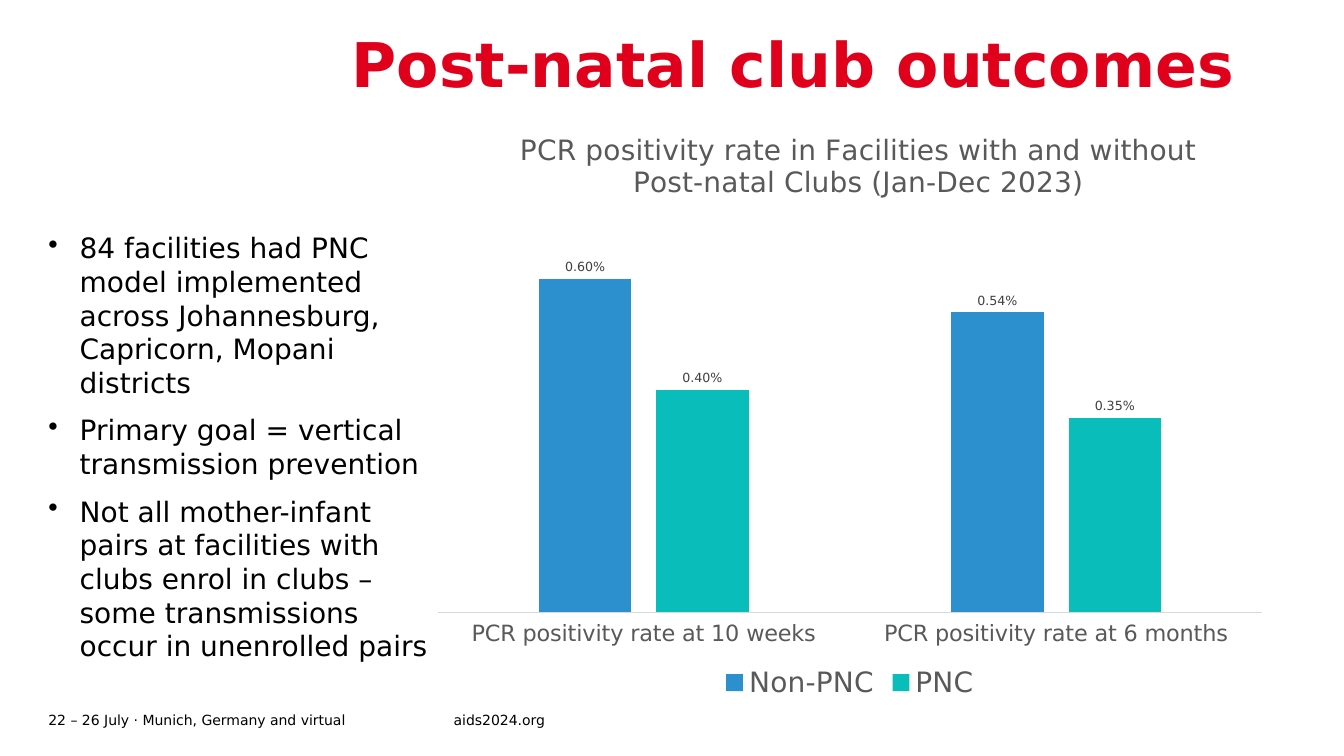
from dataclasses import dataclass

from lxml.etree import SubElement
from pptx import Presentation
from pptx.chart.chart import Chart
from pptx.chart.data import CategoryChartData
from pptx.dml.color import RGBColor
from pptx.enum.chart import XL_CHART_TYPE, XL_LABEL_POSITION, XL_LEGEND_POSITION, XL_TICK_LABEL_POSITION, XL_TICK_MARK
from pptx.enum.text import MSO_ANCHOR
from pptx.oxml import parse_xml
from pptx.oxml.ns import nsdecls, qn
from pptx.slide import Slide
from pptx.text.text import Font
from pptx.util import Pt

PX = 9144  # 100 px to the inch
FONT = "DejaVu Sans"
BLACK, RED, GREY, DARK_GREY, LIGHT_GREY = "000000", "E0001B", "595959", "404040", "D9D9D9"
BULLET_INDENT = 31


@dataclass
class TextBlock:
    left: int
    top: int
    width: int
    height: int
    paragraphs: list[str]
    size: int
    color: str = BLACK
    bold: bool = False
    line_spacing: float = 1.0
    bulleted: bool = False
    anchor: MSO_ANCHOR = MSO_ANCHOR.TOP


@dataclass
class RateSeries:
    name: str
    rates: list[float]
    color: str


TEXT_BLOCKS = [
    TextBlock(48, 702, 402, 24, ["22 – 26 July · Munich, Germany and virtual"], 10, anchor=MSO_ANCHOR.MIDDLE),
    TextBlock(450, 702, 193, 24, ["aids2024.org"], 10, anchor=MSO_ANCHOR.MIDDLE),
    TextBlock(349, 34, 936, 75, ["Post-natal club outcomes"], 44, RED, bold=True, line_spacing=0.9),
    TextBlock(48, 229, 388, 449, [
        "84 facilities had PNC model implemented across Johannesburg, Capricorn, Mopani districts",
        "Primary goal = vertical transmission prevention",
        "Not all mother-infant pairs at facilities with clubs enrol in clubs – "
        "some transmissions occur in unenrolled pairs",
    ], 20, bulleted=True),
]
CHART_TITLE = "PCR positivity rate in Facilities with and without Post-natal Clubs (Jan-Dec 2023)"
CATEGORIES = ["PCR positivity rate at 10 weeks", "PCR positivity rate at 6 months"]
SERIES = [
    RateSeries("Non-PNC", [0.006, 0.0054], "2C90CF"),
    RateSeries("PNC", [0.004, 0.0035], "08BDBA"),
]


def rgb(color: str) -> RGBColor:
    return RGBColor.from_string(color)


def style_font(font: Font, size: int, color: str, bold: bool = False) -> None:
    for name, value in {"name": FONT, "size": Pt(size), "bold": bold}.items():
        setattr(font, name, value)
    font.color.rgb = rgb(color)


def add_text(page: Slide, block: TextBlock) -> None:
    box = page.shapes.add_textbox(*(n * PX for n in (block.left, block.top, block.width, block.height)))
    frame = box.text_frame
    settings = {"word_wrap": True, "vertical_anchor": block.anchor, "margin_left": 0,
                "margin_right": 0, "margin_top": 0, "margin_bottom": 0}
    for name, value in settings.items():
        setattr(frame, name, value)
    for index, text in enumerate(block.paragraphs):
        para = frame.add_paragraph() if index else frame.paragraphs[0]
        para.line_spacing = block.line_spacing
        para.space_before = Pt(10 if index else 0)
        if block.bulleted:
            properties = para._p.get_or_add_pPr()
            properties.set("marL", str(BULLET_INDENT * PX))
            properties.set("indent", str(-BULLET_INDENT * PX))
            SubElement(properties, qn("a:buChar"), char="•")
        span = para.add_run()
        span.text = text
        style_font(span.font, block.size, block.color, block.bold)


def manual_layout(target: str, **fractions: float):
    """Build a c:layout that places a chart part by fractions of the chart area."""
    parts = f'<c:layoutTarget val="{target}"/>' if target else ""
    parts += '<c:xMode val="edge"/><c:yMode val="edge"/>'
    parts += "".join(f'<c:{key} val="{value}"/>' for key, value in fractions.items())
    return parse_xml(f'<c:layout {nsdecls("c")}><c:manualLayout>{parts}</c:manualLayout></c:layout>')


def place_chart_parts(chart: Chart) -> None:
    title = chart._chartSpace.chart.find(qn("c:title"))
    plot_area = chart._chartSpace.chart.plotArea
    for part in (title, plot_area):
        for layout in part.findall(qn("c:layout")):
            part.remove(layout)
    title.find(qn("c:tx")).addnext(manual_layout("", x=0.11, y=0.01))
    plot_area.insert(0, manual_layout("inner", x=0.02, y=0.177, w=0.96, h=0.665))


def add_rate_chart(page: Slide) -> None:
    data = CategoryChartData(number_format="0.00%")
    data.categories = CATEGORIES
    for series in SERIES:
        data.add_series(series.name, series.rates)
    chart = page.shapes.add_chart(
        XL_CHART_TYPE.COLUMN_CLUSTERED, *(n * PX for n in (417, 119, 852, 580)), data).chart
    style_font(chart.font, 10, BLACK)

    chart.has_title = True
    span = chart.chart_title.text_frame.paragraphs[0].add_run()
    span.text = CHART_TITLE
    style_font(span.font, 20, GREY)
    chart.chart_title.include_in_layout = False

    chart.has_legend = True
    chart.legend.position = XL_LEGEND_POSITION.BOTTOM
    chart.legend.include_in_layout = False
    style_font(chart.legend.font, 20, GREY)

    category_axis, value_axis = chart.category_axis, chart.value_axis
    category_axis.major_tick_mark = XL_TICK_MARK.NONE
    category_axis.tick_label_position = XL_TICK_LABEL_POSITION.LOW
    style_font(category_axis.tick_labels.font, 16, GREY)
    category_axis.format.line.color.rgb = rgb(LIGHT_GREY)
    category_axis.format.line.width = Pt(0.75)
    axis_settings = {"visible": False, "has_major_gridlines": False,
                     "minimum_scale": 0, "maximum_scale": 0.007}
    for name, value in axis_settings.items():
        setattr(value_axis, name, value)

    plot = chart.plots[0]
    for name, value in {"gap_width": 219, "overlap": -27, "vary_by_categories": False}.items():
        setattr(plot, name, value)
    for series, columns in zip(SERIES, plot.series):
        columns.format.fill.solid()
        columns.format.fill.fore_color.rgb = rgb(series.color)
        labels = columns.data_labels
        label_settings = {"show_value": True, "position": XL_LABEL_POSITION.OUTSIDE_END,
                          "number_format": "0.00%", "number_format_is_linked": False}
        for name, value in label_settings.items():
            setattr(labels, name, value)
        style_font(labels.font, 9, DARK_GREY)
    place_chart_parts(chart)


def main() -> None:
    deck = Presentation()
    deck.slide_width, deck.slide_height = 1333 * PX, 750 * PX
    page = deck.slides.add_slide(deck.slide_layouts[6])
    for block in TEXT_BLOCKS:
        add_text(page, block)
    add_rate_chart(page)
    deck.save("out.pptx")


if __name__ == "__main__":
    main()
